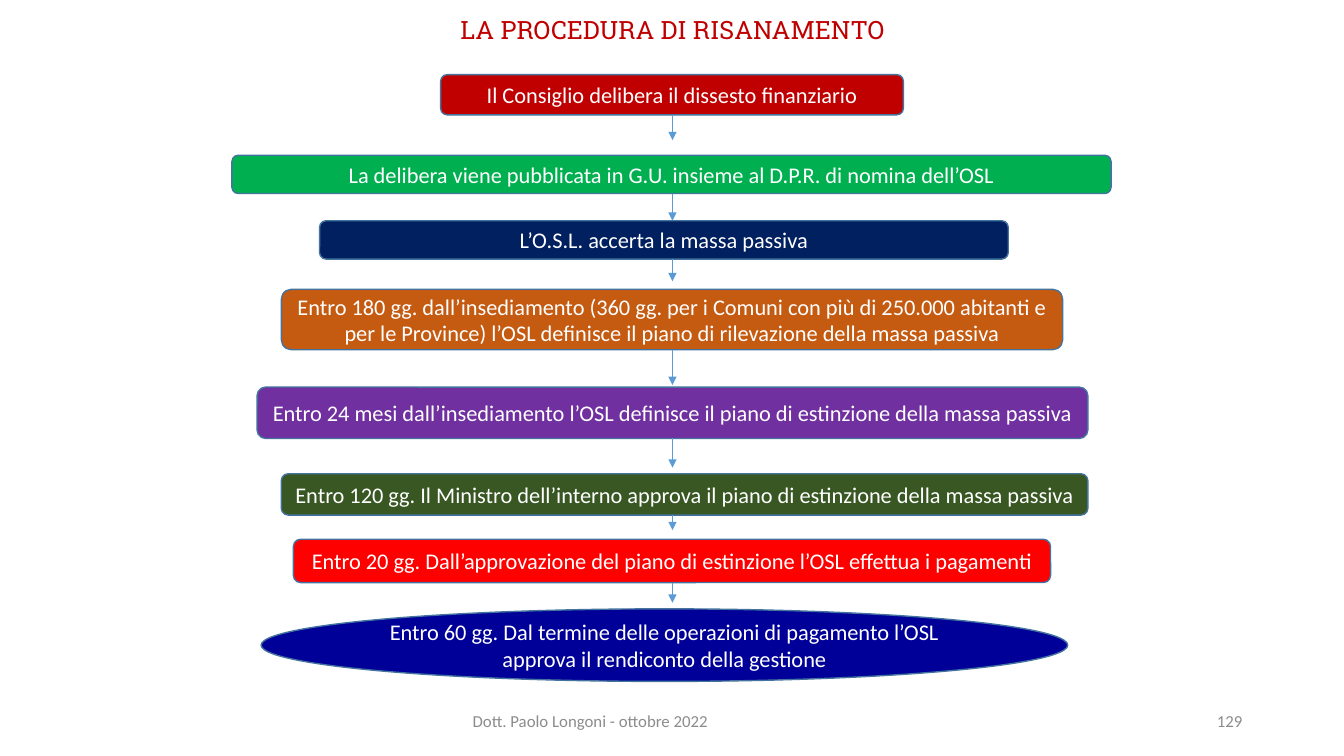
from pptx import Presentation
from pptx.dml.color import RGBColor
from pptx.enum import shapes, text
from pptx.oxml import ns
from pptx.util import Pt
from lxml import etree

PX = 9144  # 100 px to the inch
HUES = {
    "title": "C00000", "foot": "8C8C8C", "white": "FFFFFF",
    "edge": "43739E", "arrow": "5B9BD5",
    "red": "C00000", "green": "00B050", "navy": "002060", "rust": "C55A11",
    "plum": "7030A0", "olive": "385723", "flame": "FF0000", "blue": "000099",
}
FONTS = {
    "title": {"name": "Roboto Slab", "size": Pt(18)},
    "step": {"name": "Calibri", "size": Pt(16)},
    "foot": {"name": "Calibri", "size": Pt(12)},
}
FRAME = {"word_wrap": True, "vertical_anchor": text.MSO_ANCHOR.MIDDLE}
MID = text.PP_ALIGN.CENTER
RIGHT = text.PP_ALIGN.RIGHT
ROUND = shapes.MSO_SHAPE.ROUNDED_RECTANGLE
OVAL = shapes.MSO_SHAPE.OVAL

# Wording, colour, outline, box (left, top, width, height), arrow length below
STEPS = [
    ("Il Consiglio delibera il dissesto finanziario",
     "red", ROUND, (437, 74, 459, 40), 25),
    ("La delibera viene pubblicata in G.U. insieme al D.P.R. di nomina dell’OSL",
     "green", ROUND, (230, 154, 872, 38), 27),
    ("L’O.S.L. accerta la massa passiva",
     "navy", ROUND, (317, 219, 683, 38), 22),
    ("Entro 180 gg. dall’insediamento (360 gg. per i Comuni con più di 250.000 "
     "abitanti e per le Province) l’OSL definisce il piano di rilevazione della "
     "massa passiva",
     "rust", ROUND, (279, 287, 775, 60), 35),
    ("Entro 24 mesi dall’insediamento l’OSL definisce il piano di estinzione "
     "della massa passiva",
     "plum", ROUND, (255, 384, 824, 51), 29),
    ("Entro 120 gg. Il Ministro dell’interno approva il piano di estinzione "
     "della massa passiva",
     "olive", ROUND, (279, 470, 800, 41), 15),
    ("Entro 20 gg. Dall’approvazione del piano di estinzione l’OSL effettua "
     "i pagamenti",
     "flame", ROUND, (291, 535, 751, 43), 20),
    ("Entro 60 gg. Dal termine delle operazioni di pagamento l’OSL approva "
     "il rendiconto della gestione",
     "blue", OVAL, (259, 604, 800, 72), 0),
]


def emu(*vals):
    return [v * PX for v in vals]


def tint(name):
    return RGBColor.from_string(HUES[name])


def put(obj, vals):
    for key, val in vals.items():
        setattr(obj, key, val)


def write(shape, words, font, hue, align=MID):
    put(shape.text_frame, FRAME)
    para = shape.text_frame.paragraphs[0]
    para.alignment = align
    run = para.add_run()
    run.text = words
    put(run.font, FONTS[font])
    run.font.color.rgb = tint(hue)
    return para


def label(slide, box, words, font, hue, align=MID):
    return write(slide.shapes.add_textbox(*emu(*box)), words, font, hue, align)


def step(slide, box, words, hue, form):
    shape = slide.shapes.add_shape(form, *emu(*box))
    shape.shadow.inherit = False
    shape.fill.solid()
    shape.fill.fore_color.rgb = tint(hue)
    shape.line.color.rgb = tint("edge")
    shape.line.width = Pt(1)
    write(shape, words, "step", "white")


def arrow(slide, x, top, size):
    link = slide.shapes.add_connector(
        shapes.MSO_CONNECTOR.STRAIGHT, *emu(x, top, x, top + size))
    link.line.color.rgb = tint("arrow")
    link.line.width = Pt(0.5)
    etree.SubElement(link.line._get_or_add_ln(), ns.qn("a:tailEnd"),
                     type="triangle")
    etree.SubElement(link._element.spPr, ns.qn("a:effectLst"))


def head(slide, box):
    para = label(slide, box, "LA PROCEDURA DI RISANAMENTO", "title", "title")
    para.line_spacing = 0.9


def flow(slide, axis):
    for words, hue, form, box, size in STEPS:
        step(slide, box, words, hue, form)
        if size:
            arrow(slide, axis, box[1] + box[3], size)


def foot(slide, box):
    left, top, width, height = box
    label(slide, (left, top, 613, height),
          "Dott. Paolo Longoni - ottobre 2022", "foot", "foot")
    label(slide, (left + width - 300, top, 300, height),
          "129", "foot", "foot", RIGHT)


def main():
    deck = Presentation()
    deck.slide_width, deck.slide_height = emu(1333, 750)
    slide = deck.slides.add_slide(deck.slide_layouts[6])
    head(slide, (92, 12, 1150, 38))
    flow(slide, 667)
    foot(slide, (279, 695, 963, 40))
    deck.save("out.pptx")


if __name__ == "__main__":
    main()
